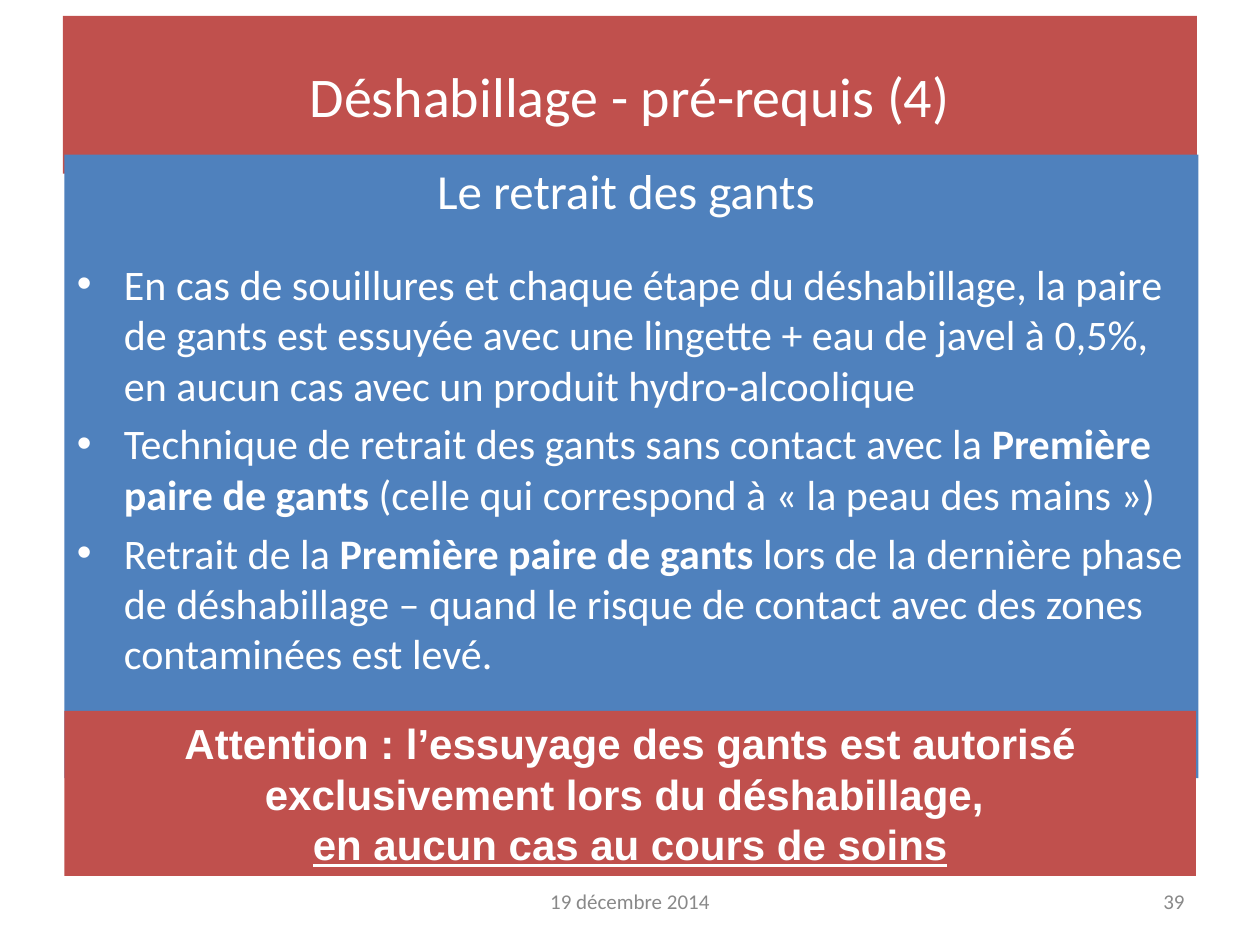
from pptx import Presentation
from pptx.dml.color import RGBColor
from pptx.enum.shapes import MSO_SHAPE as Shape
from pptx.enum.text import MSO_ANCHOR as Anchor, PP_ALIGN as Align
from pptx.oxml.xmlchemy import OxmlElement as Node
from pptx.util import Cm, Pt

RED = RGBColor(0xC0, 0x50, 0x4D)
BLUE = RGBColor(0x4F, 0x81, 0xBD)
WHITE = RGBColor(0xFF, 0xFF, 0xFF)
GREY = RGBColor(0x89, 0x89, 0x89)
HANG = Cm(0.95)


def write(par, text, size=24, font="Calibri", color=WHITE, align=Align.LEFT,
          bold=False, line=False, hang=False, bullet=False, before=0, pitch=None):
    par.alignment = align
    par.space_before = Pt(before)
    if pitch:
        par.line_spacing = Pt(pitch)
    props = par._p.get_or_add_pPr()
    if hang:
        props.set("marL", str(HANG))
        props.set("indent", str(-HANG))
    if bullet:
        face = Node("a:buFont")
        face.set("typeface", "Arial")
        mark = Node("a:buChar")
        mark.set("char", "•")
        props.extend([face, mark])
    par.font.size = Pt(size)
    par.font.name = font
    par.font.color.rgb = color
    for i, part in enumerate(text.split("**")):
        if part:
            run = par.add_run()
            run.text = part
            run.font.size = Pt(size)
            run.font.name = font
            run.font.color.rgb = color
            run.font.bold = bold or i % 2 == 1
            run.font.underline = line


class Deck:
    def __init__(self):
        self.show = Presentation()
        self.show.slide_width = Cm(25.4)
        self.show.slide_height = Cm(19.05)
        self.slide = self.show.slides.add_slide(self.show.slide_layouts[6])

    def fill(self, frame, items, anchor):
        frame.word_wrap = True
        frame.vertical_anchor = anchor
        for i, (text, style) in enumerate(items):
            par = frame.add_paragraph() if i else frame.paragraphs[0]
            write(par, text, **style)

    def panel(self, box, color, items, anchor=Anchor.TOP):
        shape = self.slide.shapes.add_shape(Shape.RECTANGLE, *map(Cm, box))
        shape.shadow.inherit = False
        shape.fill.solid()
        shape.fill.fore_color.rgb = color
        shape.line.fill.background()
        self.fill(shape.text_frame, items, anchor)

    def label(self, box, text, align):
        shape = self.slide.shapes.add_textbox(*map(Cm, box))
        style = dict(size=12, color=GREY, align=align)
        self.fill(shape.text_frame, [(text, style)], Anchor.MIDDLE)


def main():
    deck = Deck()
    deck.label((8.68, 17.66, 8.04, 1.01), "19 décembre 2014", Align.CENTER)
    deck.label((18.2, 17.66, 5.93, 1.01), "39", Align.RIGHT)

    title = dict(size=32, align=Align.CENTER)
    deck.panel((1.27, 0.32, 22.86, 3.18), RED,
               [("Déshabillage - pré-requis (4)", title)], Anchor.MIDDLE)

    head = dict(size=28, align=Align.CENTER, hang=True)
    item = dict(hang=True, bullet=True, before=4.8)
    first = {**item, "before": 22}
    deck.panel((1.3, 3.12, 22.86, 12.57), BLUE, [
        ("Le retrait des gants ", head),
        ("En cas de souillures et chaque étape du déshabillage, la paire de gants "
         "est essuyée avec une lingette + eau de javel à 0,5%, en aucun cas avec "
         "un produit hydro-alcoolique", first),
        ("Technique de retrait des gants sans contact avec la **Première paire de "
         "gants **(celle qui correspond à « la peau des mains »)", item),
        ("Retrait de la **Première paire de gants **lors de la dernière phase de "
         "déshabillage – quand le risque de contact avec des zones contaminées "
         "est levé.", item),
    ])

    alert = dict(font="Arial", bold=True, align=Align.CENTER, pitch=29)
    deck.panel((1.3, 14.33, 22.81, 3.33), RED, [
        ("Attention : l’essuyage des gants est autorisé exclusivement lors du "
         "déshabillage, ", alert),
        ("en aucun cas au cours de soins", {**alert, "line": True}),
    ])
    deck.show.save("out.pptx")


if __name__ == "__main__":
    main()
